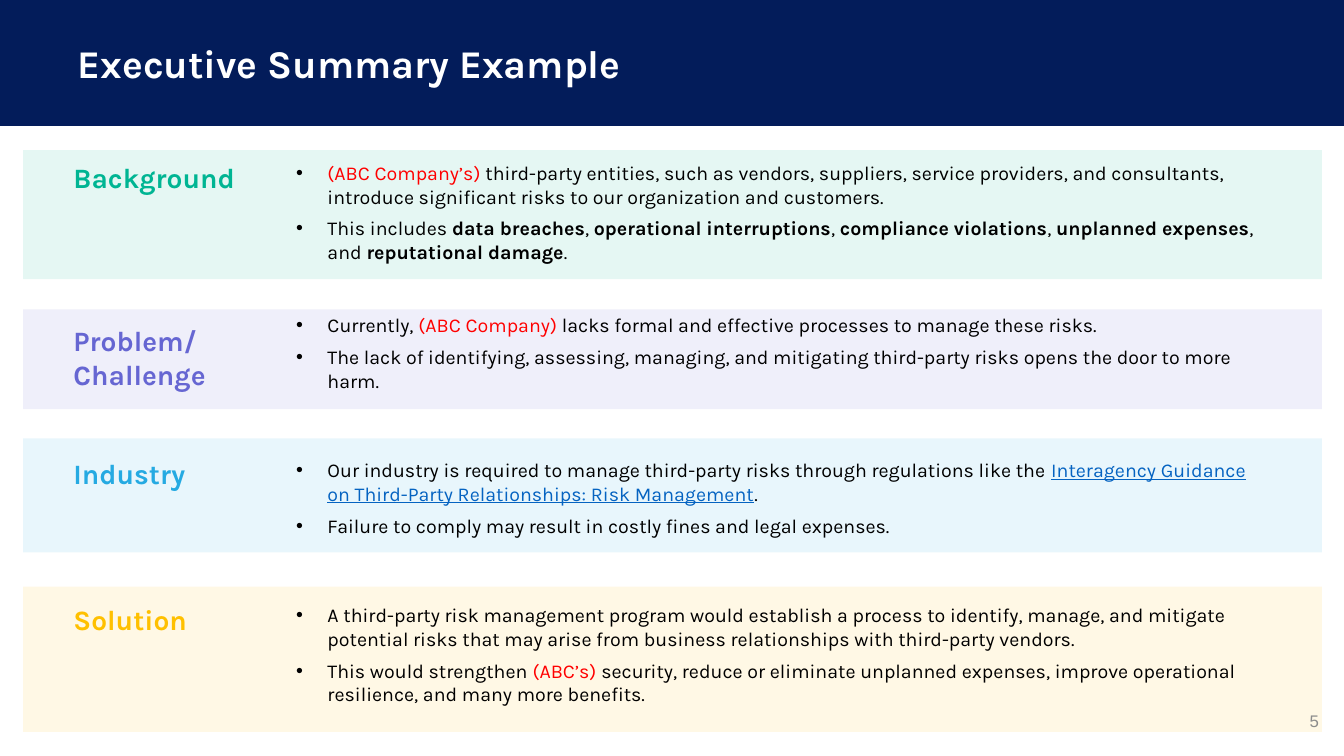
from lxml import etree
from pptx import Presentation
from pptx import util as u
from pptx.dml.color import RGBColor
from pptx.enum import shapes, text
from pptx.oxml import ns

PX = 9144  # EMU per px, 100 px to the inch

NAVY = RGBColor(0x03, 0x1C, 0x5A)
WHITE = RGBColor(0xFF, 0xFF, 0xFF)
BLACK = RGBColor(0x00, 0x00, 0x00)
RED = RGBColor(0xFF, 0x00, 0x00)
LINK_BLUE = RGBColor(0x05, 0x63, 0xC1)
GREY = RGBColor(0x8C, 0x8C, 0x8C)
GREEN = RGBColor(0x00, 0xB5, 0x93)
PURPLE = RGBColor(0x66, 0x66, 0xD2)
SKY = RGBColor(0x25, 0xAA, 0xE2)
AMBER = RGBColor(0xFF, 0xC0, 0x00)

# Each bullet is a list of (style, words)
# Each section: color, band (top, height), heading (top, height, lines),
# bullets (top, height, paragraphs)
SECTIONS = [
    (GREEN, (149, 128), (154, 44, ["Background"]), (154, 113, [
        [("fill-in", "(ABC Company’s) "),
         ("plain", "third-party entities, such as vendors, suppliers, service providers, "
                   "and consultants, introduce significant risks to our organization "
                   "and customers.")],
        [("plain", "This includes "), ("bold", "data breaches"),
         ("plain", ", "), ("bold", "operational interruptions"),
         ("plain", ", "), ("bold", "compliance violations"),
         ("plain", ", "), ("bold", "unplanned expenses"),
         ("plain", ", and "), ("bold", "reputational damage"), ("plain", ".")],
    ])),
    (PURPLE, (307, 99), (316, 77, ["Problem/", "Challenge"]), (317, 66, [
        [("plain", "Currently, "), ("fill-in", "(ABC Company) "),
         ("plain", "lacks formal and effective processes to manage these risks.")],
        [("plain", "The lack of identifying, assessing, managing, and mitigating "
                   "third-party risks opens the door to more harm.")],
    ])),
    (SKY, (435, 113), (448, 44, ["Industry"]), (449, 89, [
        [("plain", "Our industry is required to manage third-party risks through "
                   "regulations like the "),
         ("link", "Interagency Guidance on Third-Party Relationships: Risk Management"),
         ("plain", ".")],
        [("plain", "Failure to comply may result in costly fines and legal expenses.")],
    ])),
    (AMBER, (582, 144), (593, 44, ["Solution"]), (593, 113, [
        [("plain", "A third-party risk management program would establish a process to "
                   "identify, manage, and mitigate potential risks that may arise from "
                   "business relationships with third-party vendors.")],
        [("plain", "This would strengthen "), ("fill-in", "(ABC’s) "),
         ("plain", "security, reduce or eliminate unplanned expenses, improve "
                   "operational resilience, and many more benefits.")],
    ])),
]


def px(length):
    return u.Emu(length * PX)


def set_font(font, size, color, name="Karla", bold=False):
    font.name = name
    font.size = u.Pt(size)
    font.bold = bold
    font.color.rgb = color


def add_band(slide, left, top, width, height, color, opacity=None):
    band = slide.shapes.add_shape(shapes.MSO_SHAPE.RECTANGLE,
                                  px(left), px(top), px(width), px(height))
    band.shadow.inherit = False
    band.line.fill.background()
    band.fill.solid()
    band.fill.fore_color.rgb = color
    if opacity is not None:
        clr = band.element.spPr.find(ns.qn("a:solidFill"))[0]
        etree.SubElement(clr, ns.qn("a:alpha"), val=str(opacity * 1000))
    return band


def add_frame(slide, left, top, width, height, anchor=text.MSO_ANCHOR.TOP):
    frame = slide.shapes.add_textbox(px(left), px(top), px(width), px(height)).text_frame
    frame.word_wrap = True
    frame.vertical_anchor = anchor
    return frame


def add_bullet_mark(paragraph):
    props = paragraph._p.get_or_add_pPr()
    props.set("marL", str(px(31)))
    props.set("indent", str(-px(31)))
    mark_color = etree.SubElement(props, ns.qn("a:buClr"))
    etree.SubElement(mark_color, ns.qn("a:srgbClr"), val=str(BLACK))
    etree.SubElement(props, ns.qn("a:buFont"), typeface="Arial")
    etree.SubElement(props, ns.qn("a:buChar"), char="•")


def add_bullets(slide, top, height, bullets):
    frame = add_frame(slide, 284, top, 987, height, text.MSO_ANCHOR.MIDDLE)
    for number, parts in enumerate(bullets):
        bullet = frame.add_paragraph() if number else frame.paragraphs[0]
        add_bullet_mark(bullet)
        bullet.space_after = u.Pt(6)
        set_font(bullet.font, 14, BLACK)
        for style, words in parts:
            run = bullet.add_run()
            run.text = words
            if style == "bold":
                run.font.bold = True
            elif style == "fill-in":
                run.font.color.rgb = RED
            elif style == "link":
                run.font.color.rgb = LINK_BLUE
                run.font.underline = True


def add_heading(slide, top, height, lines, color):
    frame = add_frame(slide, 63, top, 222, height)
    frame.text = "\n".join(lines)
    for line in frame.paragraphs:
        set_font(line.font, 20, color, bold=True)


def add_title(slide, words):
    title = slide.shapes.title
    header = add_band(slide, 0, 0, 1333, 125, NAVY)
    title.element.addprevious(header.element)  # header lies behind the title
    title.left, title.top, title.width, title.height = px(67), px(34), px(600), px(57)
    frame = title.text_frame
    frame.text = words
    frame.word_wrap = True
    frame.auto_size = text.MSO_AUTO_SIZE.NONE
    frame.vertical_anchor = text.MSO_ANCHOR.TOP
    frame.paragraphs[0].alignment = text.PP_ALIGN.LEFT
    set_font(frame.paragraphs[0].font, 28, WHITE, bold=True)


def add_page_number(slide, number):
    frame = add_frame(slide, 1018, 695, 300, 40, text.MSO_ANCHOR.MIDDLE)
    frame.text = number
    frame.paragraphs[0].alignment = text.PP_ALIGN.RIGHT
    set_font(frame.paragraphs[0].font, 12, GREY, name="Arial")


def main():
    deck = Presentation()
    deck.slide_width, deck.slide_height = px(1333), px(750)
    slide = deck.slides.add_slide(deck.slide_layouts[5])

    # Header
    add_title(slide, "Executive Summary Example")

    # Sections
    for color, band, heading, bullets in SECTIONS:
        band_top, band_height = band
        add_band(slide, 23, band_top, 1288, band_height, color, opacity=10)
        add_heading(slide, *heading, color)
        add_bullets(slide, *bullets)

    # Footer
    add_page_number(slide, "5")
    deck.save("out.pptx")


if __name__ == "__main__":
    main()
